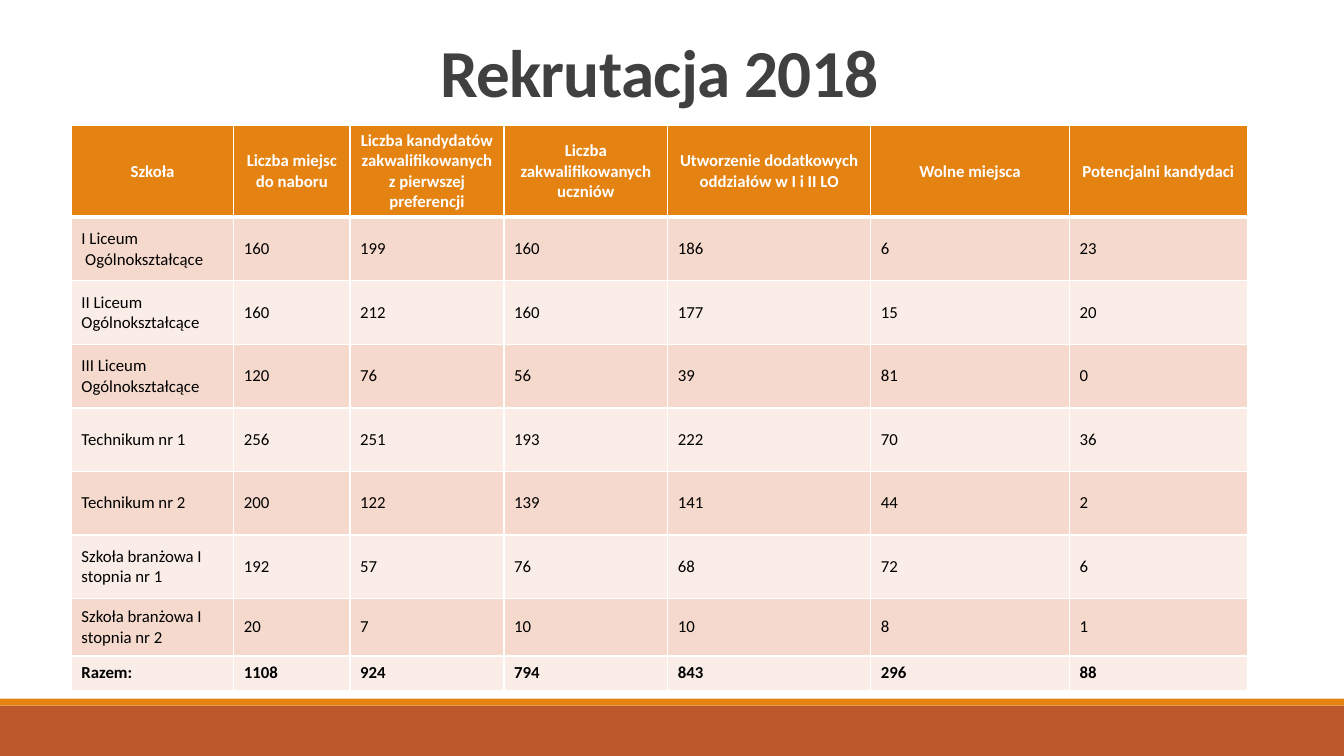
from lxml import etree
from pptx import Presentation
from pptx.dml.color import RGBColor
from pptx.enum.shapes import MSO_SHAPE
from pptx.enum.text import MSO_ANCHOR, PP_ALIGN
from pptx.oxml.ns import qn
from pptx.util import Pt

RECT = MSO_SHAPE.RECTANGLE
MIDDLE, BOTTOM = MSO_ANCHOR.MIDDLE, MSO_ANCHOR.BOTTOM
LEFT, CENTER = PP_ALIGN.LEFT, PP_ALIGN.CENTER

FONT = "Calibri"
COLORS = {
    "white": "FFFFFF",
    "black": "000000",
    "title": "404040",
    "orange": "E48312",
    "rust": "BD582C",
    "odd": "F5D9CC",
    "even": "FAEDE7",
}

HEADERS = [
    "Szkoła",
    "Liczba miejsc do naboru",
    "Liczba kandydatów zakwalifikowanych z pierwszej preferencji",
    "Liczba zakwalifikowanych uczniów",
    "Utworzenie dodatkowych oddziałów w I i II LO",
    "Wolne miejsca",
    "Potencjalni kandydaci",
]
SCHOOLS = [
    ["I Liceum\n Ogólnokształcące", 160, 199, 160, 186, 6, 23],
    ["II Liceum Ogólnokształcące", 160, 212, 160, 177, 15, 20],
    ["III Liceum Ogólnokształcące", 120, 76, 56, 39, 81, 0],
    ["Technikum nr 1", 256, 251, 193, 222, 70, 36],
    ["Technikum nr 2", 200, 122, 139, 141, 44, 2],
    ["Szkoła branżowa I stopnia nr 1", 192, 57, 76, 68, 72, 6],
    ["Szkoła branżowa I stopnia nr 2", 20, 7, 10, 10, 8, 1],
]
TOTALS = ["Razem:", 1108, 924, 794, 843, 296, 88]
ROWS = [HEADERS, *SCHOOLS, TOTALS]
COL_WIDTHS = [116, 83, 110, 117, 145, 142, 127]
ROW_HEIGHTS = [57.6] + [45.4] * 6 + [41, 24.5]


def style_runs(p, size, color, bold):
    for r in p.runs:
        r.font.name = FONT
        r.font.size = Pt(size)
        r.font.bold = bold
        r.font.color.rgb = RGBColor.from_string(COLORS[color])


def add_border(cell, side, width):
    ln = etree.SubElement(cell._tc.get_or_add_tcPr(), qn(f"a:ln{side}"), w=str(Pt(width)))
    fill = etree.SubElement(ln, qn("a:solidFill"))
    etree.SubElement(fill, qn("a:srgbClr"), val=COLORS["white"])


prs = Presentation()
prs.slide_width, prs.slide_height = Pt(960), Pt(540)
s = prs.slides.add_slide(prs.slide_layouts[5])

# Footer bands
for top, height, color in [(504, 36, "rust"), (499, 5, "orange")]:
    sp = s.shapes.add_shape(RECT, Pt(0), Pt(top), Pt(960), Pt(height))
    sp.shadow.inherit = False
    sp.fill.solid()
    sp.fill.fore_color.rgb = RGBColor.from_string(COLORS[color])
    sp.line.fill.background()

# Title
title = s.shapes.title
title.left, title.top, title.width, title.height = Pt(75), Pt(15), Pt(792), Pt(68)
tf = title.text_frame
tf.text = "Rekrutacja 2018"
tf.vertical_anchor = BOTTOM
p = tf.paragraphs[0]
p.alignment = CENTER
p.line_spacing = 0.85
style_runs(p, 48, "title", True)
p.runs[0].font._element.set("spc", "-50")

# Recruitment table
table = s.shapes.add_table(
    len(ROWS), len(HEADERS), Pt(51), Pt(89.5), Pt(sum(COL_WIDTHS)), Pt(sum(ROW_HEIGHTS))
).table
for col, width in zip(table.columns, COL_WIDTHS):
    col.width = Pt(width)

for i, values in enumerate(ROWS):
    table.rows[i].height = Pt(ROW_HEIGHTS[i])
    header = i == 0
    fill = "orange" if header else "odd" if i % 2 else "even"
    for j, value in enumerate(values):
        cell = table.cell(i, j)
        for side in "LRTB":
            under_header = (i, side) in [(0, "B"), (1, "T")]
            add_border(cell, side, 3 if under_header else 1)
        cell.fill.solid()
        cell.fill.fore_color.rgb = RGBColor.from_string(COLORS[fill])
        cell.vertical_anchor = MIDDLE
        cell.text_frame.text = str(value)
        for p in cell.text_frame.paragraphs:
            p.alignment = CENTER if header else LEFT
            style_runs(p, 12, "white" if header else "black", header or values is TOTALS)

prs.save("out.pptx")
